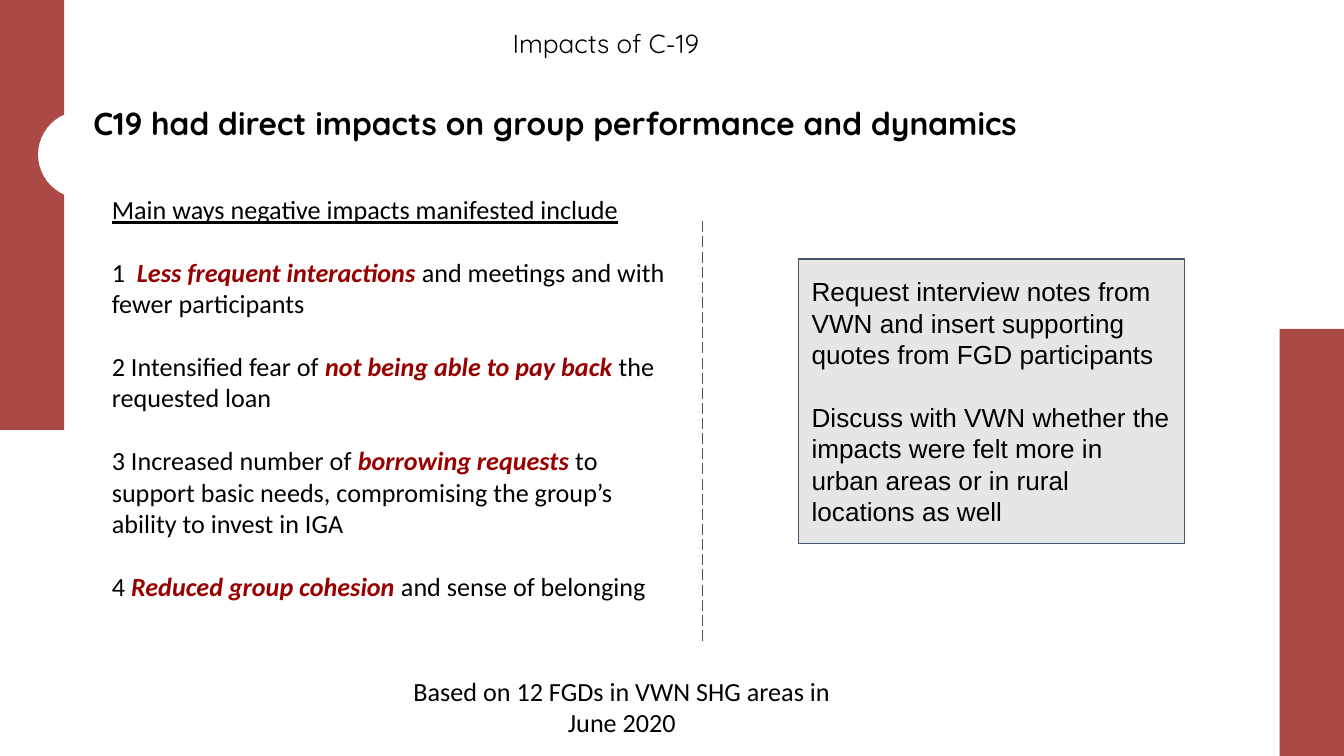
from dataclasses import dataclass

from lxml.etree import SubElement
from pptx import Presentation
from pptx.dml.color import RGBColor
from pptx.enum.dml import MSO_LINE_DASH_STYLE as Dash
from pptx.enum.shapes import MSO_CONNECTOR as Connector, MSO_SHAPE as Shape
from pptx.enum.text import MSO_ANCHOR as Anchor, MSO_AUTO_SIZE as AutoSize, PP_ALIGN as Align
from pptx.oxml.ns import qn
from pptx.util import Pt


@dataclass(frozen=True)
class Theme:
    """Colours, fonts and type sizes of the slide."""
    brick: RGBColor = RGBColor(0xAB, 0x49, 0x46)
    emphasis: RGBColor = RGBColor(0x98, 0x00, 0x00)
    ink: RGBColor = RGBColor(0, 0, 0)
    paper: RGBColor = RGBColor(0xFF, 0xFF, 0xFF)
    note: RGBColor = RGBColor(0xE7, 0xE6, 0xE6)
    outline: RGBColor = RGBColor(0x44, 0x54, 0x6A)
    heading_font: str = "Quicksand"
    body_font: str = "Calibri"
    note_font: str = "Arial"
    title_size: float = 17
    body_size: float = 14
    paragraph_gap: float = 16.8


THEME = Theme()

IMPACTS = [
    ("1  ", "Less frequent interactions", " and meetings and with fewer participants"),
    ("2 Intensified fear of ", "not being able to pay back", " the requested loan"),
    ("3 Increased number of", " borrowing requests",
     " to support basic needs, compromising the group’s ability to invest in IGA"),
    ("4 ", "Reduced group cohesion", " and sense of belonging"),
]
REQUESTS = [
    "Request interview notes from VWN and insert supporting quotes from FGD participants",
    "Discuss with VWN whether the impacts were felt more in urban areas or in rural locations as well",
]


def add_run(paragraph, words, font, size=THEME.body_size, color=THEME.ink):
    """Append a styled run and return its font."""
    run = paragraph.add_run()
    run.text = words
    run.font.name, run.font.size = font, Pt(size)
    run.font.color.rgb = color
    return run.font


def set_frame(frame, anchor, across=7.2, down=7.2):
    """Set wrapping, anchor and insets of a text frame."""
    frame.word_wrap, frame.auto_size = True, AutoSize.NONE
    frame.vertical_anchor = anchor
    frame.margin_left = frame.margin_right = Pt(across)
    frame.margin_top = frame.margin_bottom = Pt(down)


def add_text(slide, *bounds):
    """Add a wrapping text box and return its frame."""
    frame = slide.shapes.add_textbox(*map(Pt, bounds)).text_frame
    set_frame(frame, Anchor.TOP)
    return frame


def add_spaced(frame):
    """Append a paragraph set off by one line of space."""
    paragraph = frame.add_paragraph()
    paragraph.space_before = Pt(THEME.paragraph_gap)
    return paragraph


def add_block(slide, kind, bounds, fill, outline=None, width=0.75):
    """Add a flat filled shape with an optional outline."""
    block = slide.shapes.add_shape(kind, *map(Pt, bounds))
    block.shadow.inherit = False
    block.fill.solid()
    block.fill.fore_color.rgb = fill
    if outline is None:
        block.line.fill.background()
    else:
        block.line.color.rgb, block.line.width = outline, Pt(width)
    return block


def fill_heading(frame, words, size, bold=False):
    """Write an indented heading line."""
    set_frame(frame, Anchor.MIDDLE, 5, 3)
    line = frame.paragraphs[0]
    line.alignment = Align.LEFT
    line.line_spacing, line.space_before = 1.5, Pt(4)
    properties = line._p.get_or_add_pPr()
    properties.set("marL", str(Pt(27)))
    properties.set("indent", "0")
    add_run(line, words, THEME.heading_font, size).bold = bold


def add_title(slide, words, *bounds):
    """Place the title placeholder in front of the side decoration."""
    title = slide.shapes.title
    title.left, title.top, title.width, title.height = map(Pt, bounds)
    fill_heading(title.text_frame, words, THEME.title_size, bold=True)
    slide.shapes._spTree.append(title._element)


def add_impacts(slide):
    """List the negative impacts under an underlined lead."""
    frame = add_text(slide, 52.8, 96.5, 313.2, 242.6)
    lead = "Main ways negative impacts manifested include"
    add_run(frame.paragraphs[0], lead, THEME.body_font).underline = True
    for opening, stressed, ending in IMPACTS:
        impact = add_spaced(frame)
        add_run(impact, opening, THEME.body_font)
        stress = add_run(impact, stressed, THEME.body_font, color=THEME.emphasis)
        stress.bold = stress.italic = True
        add_run(impact, ending, THEME.body_font)


def add_requests(slide):
    """Add the grey box of open requests."""
    box = add_block(slide, Shape.RECTANGLE, (427.7, 138.7, 206.8, 152.6), THEME.note, THEME.outline)
    frame = box.text_frame
    set_frame(frame, Anchor.MIDDLE)
    for index, request in enumerate(REQUESTS):
        paragraph = add_spaced(frame) if index else frame.paragraphs[0]
        paragraph.alignment = Align.LEFT
        add_run(paragraph, request, THEME.note_font)


def add_divider(slide, x, top, bottom):
    """Draw the dashed rule between the columns."""
    divider = slide.shapes.add_connector(Connector.STRAIGHT, Pt(x), Pt(top), Pt(x), Pt(bottom))
    divider.line.color.rgb, divider.line.width = THEME.outline, Pt(0.75)
    divider.line.dash_style = Dash.LONG_DASH
    SubElement(divider._element.spPr, qn("a:effectLst"))


def main():
    """Build and save the slide."""
    deck = Presentation()
    deck.slide_width, deck.slide_height = Pt(720), Pt(405)
    slide = deck.slides.add_slide(deck.slide_layouts[5])
    for bar in ((0, 0, 34.4, 230.4), (685.6, 176.2, 34.4, 228.8)):
        add_block(slide, Shape.RECTANGLE, bar, THEME.brick)
    add_block(slide, Shape.OVAL, (20.9, 59.8, 46.8, 46.1), THEME.paper, THEME.paper, 1)
    topic = add_text(slide, 242.6, 4, 260, 30.2)
    fill_heading(topic, "Impacts of C-19", THEME.body_size)
    add_title(slide, "C19 had direct impacts on group performance and dynamics", 18, 45.8, 676, 30.2)
    add_impacts(slide)
    basis = add_text(slide, 203.2, 354.5, 260, 25.2).paragraphs[0]
    basis.alignment = Align.CENTER
    add_run(basis, "Based on 12 FGDs in VWN SHG areas in June 2020", THEME.body_font)
    add_requests(slide)
    add_divider(slide, 376.4, 118.6, 344.9)
    deck.save("out.pptx")


if __name__ == "__main__":
    main()
